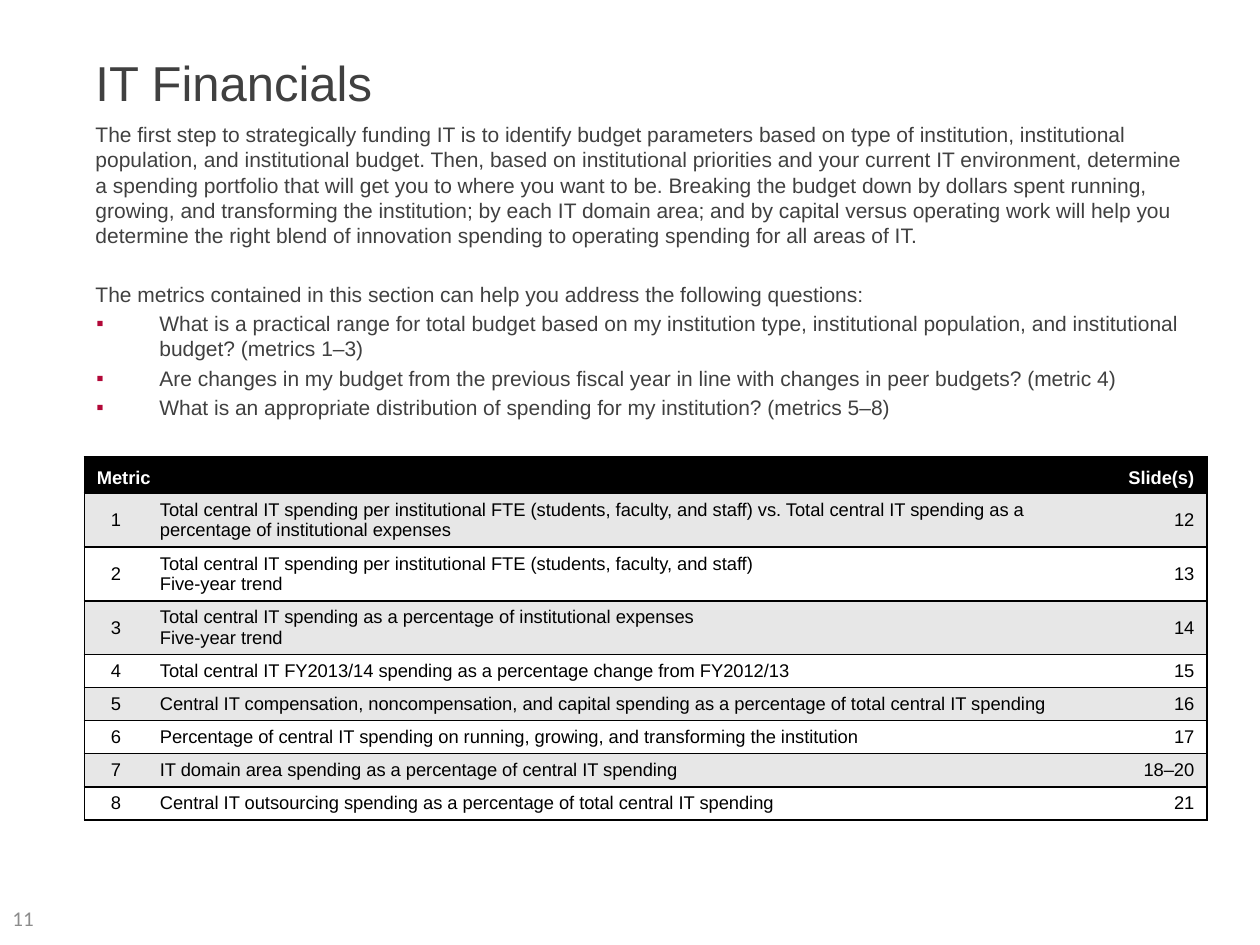
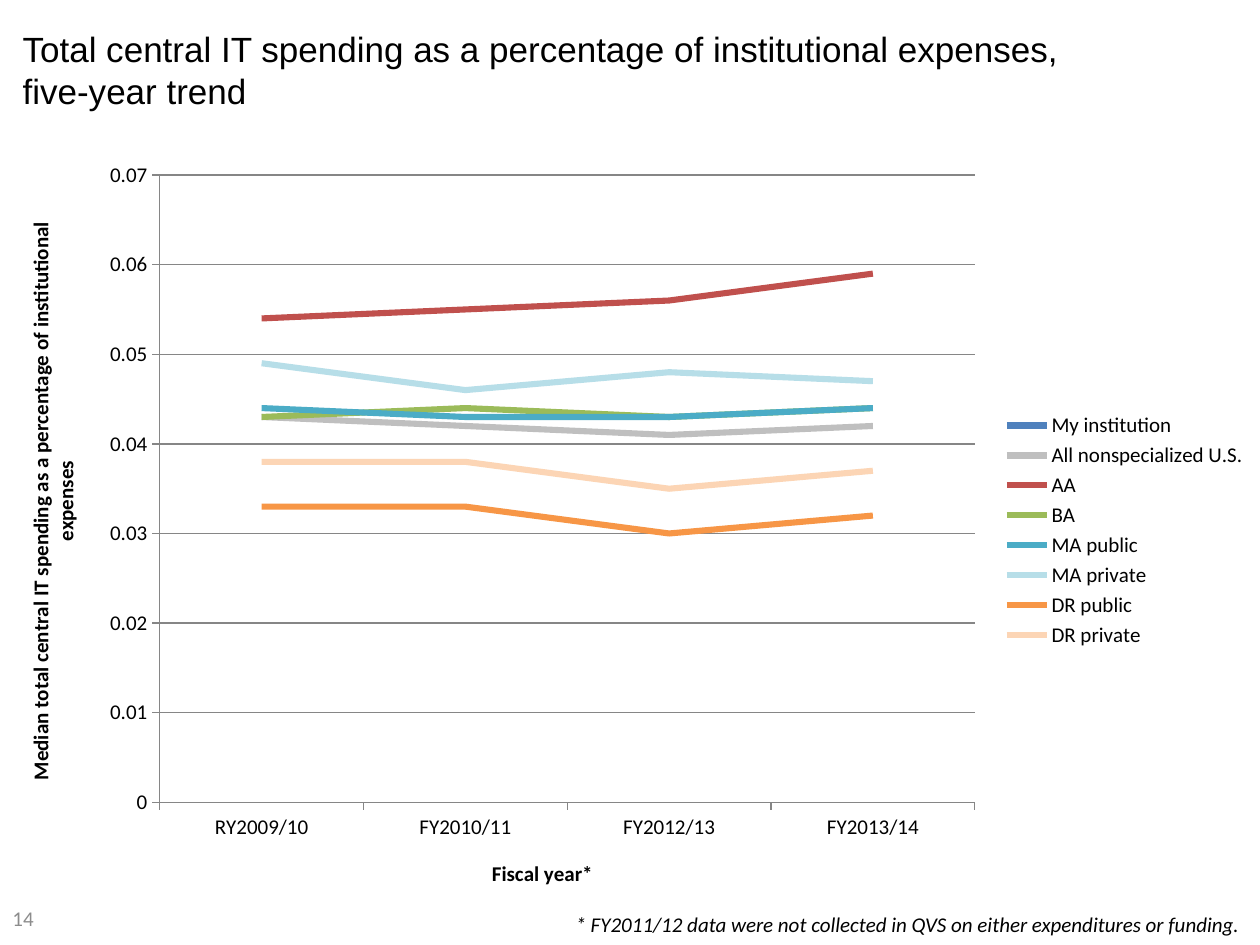
from lxml.etree import SubElement
from pptx import Presentation
from pptx.chart.data import CategoryChartData
from pptx.dml.color import RGBColor
from pptx.enum.chart import XL_CHART_TYPE as ChartType
from pptx.enum.chart import XL_LEGEND_POSITION as LegendPosition
from pptx.enum.chart import XL_TICK_MARK as TickMark
from pptx.enum.text import MSO_ANCHOR as Anchor
from pptx.enum.text import PP_ALIGN as Align
from pptx.oxml.ns import qn
from pptx.util import Pt

COLORS = {
    "black": "000000", "white": "FFFFFF", "text": "404040", "number": "8C8C8C",
    "bullet": "B20838", "stripe": "E7E7E7", "axis": "868686",
}
HEAD_FONT, CHART_FONT = "Arial", "Calibri"

INTRO = (
    "The first step to strategically funding IT is to identify budget parameters based on "
    "type of institution, institutional population, and institutional budget. Then, based on "
    "institutional priorities and your current IT environment, determine a spending portfolio "
    "that will get you to where you want to be. Breaking the budget down by dollars spent "
    "running, growing, and transforming the institution; by each IT domain area; and by capital "
    "versus operating work will help you determine the right blend of innovation spending to "
    "operating spending for all areas of IT."
)
LEAD_IN = "The metrics contained in this section can help you address the following questions:"
QUESTIONS = [
    "What is a practical range for total budget based on my institution type, institutional "
    "population, and institutional budget? (metrics 1–3)",
    "Are changes in my budget from the previous fiscal year in line with changes in peer "
    "budgets? (metric 4)",
    "What is an appropriate distribution of spending for my institution? (metrics 5–8)",
]
# Metric, slide numbers, row height
METRICS = [
    ("Total central IT spending per institutional FTE (students, faculty, and staff) vs. "
     "Total central IT spending as a percentage of institutional expenses", "12", 30.6),
    ("Total central IT spending per institutional FTE (students, faculty, and staff)\n"
     "Five-year trend", "13", 30.6),
    ("Total central IT spending as a percentage of institutional expenses\v"
     "Five-year trend", "14", 30.6),
    ("Total central IT FY2013/14 spending as a percentage change from FY2012/13", "15", 18.9),
    ("Central IT compensation, noncompensation, and capital spending as a percentage of "
     "total central IT spending", "16", 18.9),
    ("Percentage of central IT spending on running, growing, and transforming the "
     "institution", "17", 18.9),
    ("IT domain area spending as a percentage of central IT spending", "18–20", 18.9),
    ("Central IT outsourcing spending as a percentage of total central IT spending", "21", 18.9),
]
COLUMN_WIDTHS = [36, 552.2, 53.3]
HEADER_HEIGHT = 20.6

YEARS = ["RY2009/10", "FY2010/11", "FY2012/13", "FY2013/14"]
TRENDS = [
    ("My institution", [None] * 4, "4F81BD"),
    ("All nonspecialized U.S.", [0.043, 0.042, 0.041, 0.042], "BFBFBF"),
    ("AA", [0.054, 0.055, 0.056, 0.059], "C0504D"),
    ("BA", [0.043, 0.044, 0.043, 0.044], "9BBB59"),
    ("MA public", [0.044, 0.043, 0.043, 0.044], "4BACC6"),
    ("MA private", [0.049, 0.046, 0.048, 0.047], "B7DEE8"),
    ("DR public", [0.033, 0.033, 0.03, 0.032], "F79646"),
    ("DR private", [0.038, 0.038, 0.035, 0.037], "FCD5B5"),
]


def rgb(name):
    return RGBColor.from_string(COLORS.get(name, name))


def points(box):
    return [Pt(length) for length in box]


def style_font(font, name, size, color, bold=False, italic=False):
    font.name, font.size, font.bold, font.italic = name, Pt(size), bold, italic
    font.color.rgb = rgb(color)


def add_text(page, box, paragraphs, font, size, color, align=Align.LEFT,
             anchor=Anchor.TOP, italic=False):
    frame = page.shapes.add_textbox(*points(box)).text_frame
    frame.word_wrap = True
    frame.vertical_anchor = anchor
    frame.text = "\n".join(paragraphs)
    for para in frame.paragraphs:
        para.alignment = align
        style_font(para.font, font, size, color, italic=italic)
    return frame


def add_title(page, box, text, size, color):
    add_text(page, box, [text], HEAD_FONT, size, color)


def add_page_number(page, number):
    add_text(page, (0, 509.8, 77.8, 30.2), [number], CHART_FONT, 12, "number",
             anchor=Anchor.MIDDLE)


def add_bullet(para):
    props = para._p.get_or_add_pPr()
    props.set("marL", str(Pt(36.5)))
    props.set("indent", str(-Pt(36)))
    color = SubElement(props, qn("a:buClr"))
    SubElement(color, qn("a:srgbClr"), val=COLORS["bullet"])
    SubElement(props, qn("a:buFont"), typeface=HEAD_FONT)
    SubElement(props, qn("a:buChar"), char="▪")


def add_introduction(page, box):
    frame = add_text(page, box, [INTRO, LEAD_IN, *QUESTIONS], HEAD_FONT, 12, "text")
    lead_in, *questions = frame.paragraphs[1:]
    lead_in.space_before = Pt(19.2)
    for para in questions:
        para.space_before = Pt(2.4)
        add_bullet(para)


def set_borders(cell, sides):
    props = cell._tc.get_or_add_tcPr()
    for side in "LRTB":
        line = SubElement(props, qn(f"a:ln{side}"), w=str(Pt(1)))
        if side in sides:
            fill = SubElement(line, qn("a:solidFill"))
            SubElement(fill, qn("a:srgbClr"), val=COLORS["black"])
        else:
            SubElement(line, qn("a:noFill"))


def fill_cell(cell, text, align, sides, fill, header):
    set_borders(cell, sides)
    cell.fill.solid()
    cell.fill.fore_color.rgb = rgb(fill)
    cell.vertical_anchor = Anchor.BOTTOM if header else Anchor.MIDDLE
    cell.margin_top = cell.margin_bottom = Pt(2.8)
    cell.text = text
    for para in cell.text_frame.paragraphs:
        para.alignment = align
        style_font(para.font, HEAD_FONT, 10.5, "white" if header else "black", bold=header)


def add_metrics_table(page, left, top):
    heights = [HEADER_HEIGHT] + [height for _, _, height in METRICS]
    box = (left, top, sum(COLUMN_WIDTHS), sum(heights))
    table = page.shapes.add_table(len(heights), len(COLUMN_WIDTHS), *points(box)).table
    for column, width in zip(table.columns, COLUMN_WIDTHS):
        column.width = Pt(width)
    for row, height in zip(table.rows, heights):
        row.height = Pt(height)

    rows = [("Metric", "", "Slide(s)")]
    rows += [(str(i), metric, slides) for i, (metric, slides, _) in enumerate(METRICS, 1)]
    for r, texts in enumerate(rows):
        header = r == 0
        fill = "black" if header else ("white", "stripe")[r % 2]
        aligns = [Align.LEFT if header else Align.CENTER, Align.LEFT, Align.RIGHT]
        for c, (text, align, sides) in enumerate(zip(texts, aligns, ("LTB", "TB", "RTB"))):
            fill_cell(table.cell(r, c), text, align, sides, fill, header)
    table.cell(0, 0).merge(table.cell(0, 1))


def style_axis(axis, title):
    axis.major_tick_mark = TickMark.OUTSIDE
    axis.minor_tick_mark = TickMark.NONE
    axis.format.line.color.rgb = rgb("axis")
    axis.format.line.width = Pt(0.75)
    style_font(axis.tick_labels.font, CHART_FONT, 12, "black")
    frame = axis.axis_title.text_frame
    frame.text = title
    style_font(frame.paragraphs[0].font, CHART_FONT, 12, "black", bold=True)


def add_trend_chart(page, box):
    data = CategoryChartData()
    data.categories = YEARS
    for name, values, _ in TRENDS:
        data.add_series(name, values)
    chart = page.shapes.add_chart(ChartType.LINE, *points(box), data).chart
    style_font(chart.font, CHART_FONT, 12, "black")
    chart.has_title = False
    chart.plots[0].vary_by_categories = False
    for series, (_, _, color) in zip(chart.plots[0].series, TRENDS):
        series.smooth = False
        series.format.line.color.rgb = rgb(color)
        series.format.line.width = Pt(3.5)

    # Axes and legend
    style_axis(chart.category_axis, "Fiscal year*")
    values = chart.value_axis
    style_axis(values, "Median total central IT spending as a percentage of "
                       "institutional expenses")
    values.minimum_scale, values.maximum_scale, values.major_unit = 0, 0.07, 0.01
    values.has_major_gridlines = True
    values.major_gridlines.format.line.color.rgb = rgb("axis")
    values.major_gridlines.format.line.width = Pt(0.75)
    chart.has_legend = True
    chart.legend.position = LegendPosition.RIGHT
    chart.legend.include_in_layout = False
    style_font(chart.legend.font, CHART_FONT, 12, "black")


def build_financials(page):
    add_title(page, (47.5, 26.6, 631.4, 57.6), "IT Financials", 28, "text")
    add_introduction(page, (47.5, 66, 636.5, 190))
    add_metrics_table(page, 48.2, 261.2)
    add_page_number(page, "11")


def build_trend(page):
    add_title(page, (5.8, 12.2, 702, 72),
              "Total central IT spending as a percentage of institutional expenses,\v"
              "five-year trend", 20, "black")
    add_trend_chart(page, (0, 84.2, 720, 437.8))
    add_page_number(page, "14")
    add_text(page, (34.6, 517.4, 681, 21.6),
             ["* FY2011/12 data were not collected in QVS on either expenditures or funding."],
             CHART_FONT, 12, "black", align=Align.RIGHT, italic=True)


def main():
    deck = Presentation()
    deck.slide_width, deck.slide_height = Pt(720), Pt(540)
    blank = deck.slide_layouts[6]
    for build in (build_financials, build_trend):
        build(deck.slides.add_slide(blank))
    deck.save("out.pptx")


if __name__ == "__main__":
    main()
